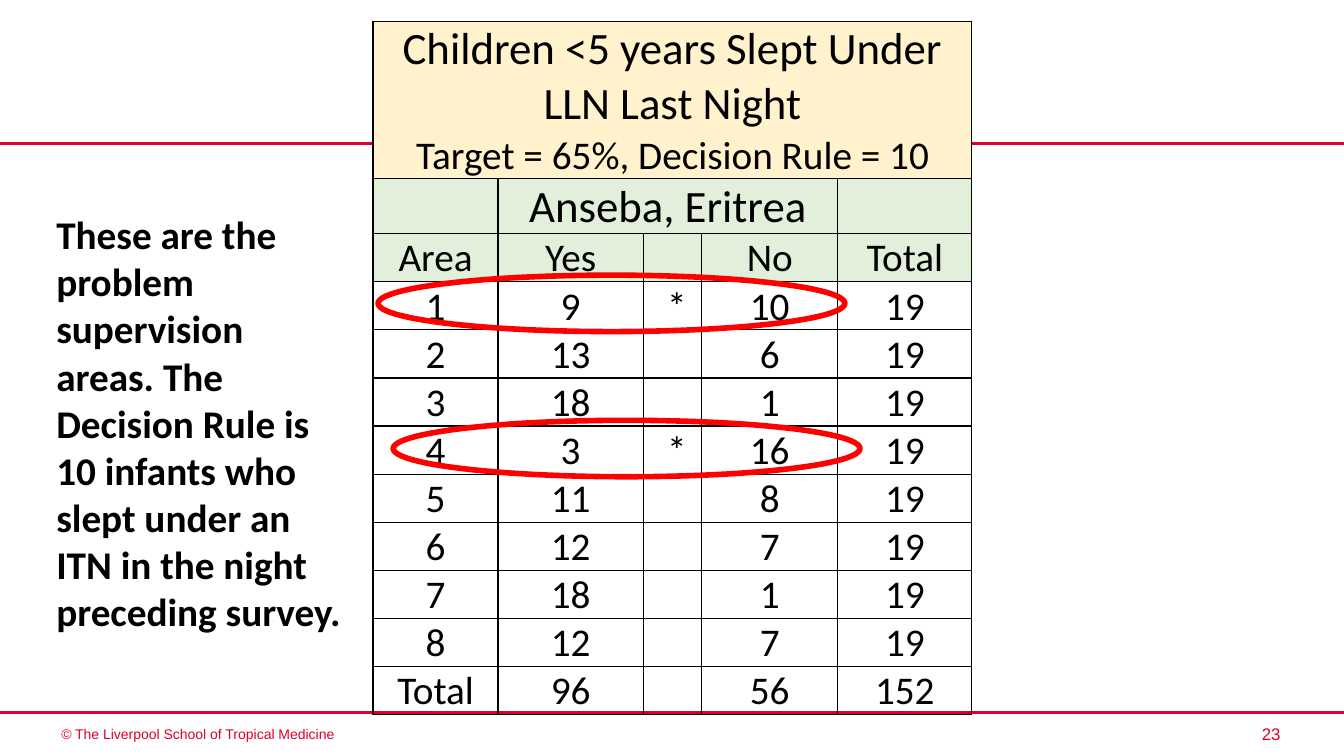
import pptx
import pptx.util
import pptx.dml.color
import pptx.enum.shapes
import pptx.enum.text
import pptx.oxml
import pptx.oxml.ns
import lxml.etree

Inches, Pt = pptx.util.Inches, pptx.util.Pt
ALIGN = pptx.enum.text.PP_ALIGN
RED, BLACK, CREAM, GREEN = "DC002E", "000000", "FFF2CC", "E2EFDA"

TITLE_ROWS = [("Children <5 years Slept Under", 32),
              ("LLN Last Night", 32),
              ("Target = 65%, Decision Rule = 10", 28)]
AREAS = [(9, 10), (13, 6), (18, 1), (3, 16), (11, 8), (12, 7), (18, 1), (12, 7)]
DECISION_RULE = 10
COLUMN_WIDTHS = [1.24, 1.44, 0.58, 1.35, 1.33]
ROW_HEIGHTS = [0.5, 0.5, 0.47, 0.51] + [0.47] * 10


def color(value):
    return pptx.dml.color.RGBColor.from_string(value)


def write(tf, text, size=28, font="Calibri", fill=BLACK, bold=False, align=ALIGN.LEFT):
    p = tf.paragraphs[0]
    p.alignment = align
    r = p.add_run()
    r.text = text
    r.font.size, r.font.name, r.font.bold = Pt(size), font, bold
    r.font.color.rgb = color(fill)


def add_text(s, box, text, **style):
    tf = s.shapes.add_textbox(*map(Inches, box)).text_frame
    tf.word_wrap = True
    tf.margin_right = Inches(0.05)
    write(tf, text, **style)


def add_rule(s, y):
    line = s.shapes.add_connector(pptx.enum.shapes.MSO_CONNECTOR.STRAIGHT,
                                  0, Inches(y), Inches(13.33), Inches(y))
    line.line.color.rgb = color(RED)
    line.line.width = Pt(2.25)
    lxml.etree.SubElement(line._element.spPr, pptx.oxml.ns.qn("a:effectLst"))


def add_ring(s, x, y):
    ring = s.shapes.add_shape(pptx.enum.shapes.MSO_SHAPE.OVAL,
                              Inches(x), Inches(y), Inches(4.63), Inches(0.56))
    ring.shadow.inherit = False
    ring.fill.background()
    ring.line.color.rgb = color("FF0000")
    ring.line.width = Pt(4)


def set_borders(cell, hidden=""):
    for side in "LRTB":
        paint = ("<a:noFill/>" if side in hidden else
                 f'<a:solidFill><a:srgbClr val="{BLACK}"/></a:solidFill>')
        cell._tc.get_or_add_tcPr().append(pptx.oxml.parse_xml(
            f'<a:ln{side} {pptx.oxml.ns.nsdecls("a")} w="{Pt(1)}">{paint}</a:ln{side}>'))


def fill_cell(cell, text="", size=28, fill=None, hidden=""):
    set_borders(cell, hidden)
    if fill:
        cell.fill.solid()
        cell.fill.fore_color.rgb = color(fill)
    else:
        cell.fill.background()
    if text:
        cell.vertical_anchor = pptx.enum.text.MSO_ANCHOR.BOTTOM
        cell.margin_left = cell.margin_right = cell.margin_top = Inches(0.01)
        cell.margin_bottom = 0
        write(cell.text_frame, text, size=size, align=ALIGN.CENTER)


def add_coverage_table(s):
    table = s.shapes.add_table(len(ROW_HEIGHTS), len(COLUMN_WIDTHS), Inches(3.7), Inches(0.21),
                               Inches(sum(COLUMN_WIDTHS)), Inches(sum(ROW_HEIGHTS))).table
    table.first_row = table.horz_banding = False
    for column, width in zip(table.columns, COLUMN_WIDTHS):
        column.width = Inches(width)
    for row, height in zip(table.rows, ROW_HEIGHTS):
        row.height = Inches(height)

    # Title block: three merged rows without lines between them
    for i, ((text, size), hidden) in enumerate(zip(TITLE_ROWS, ("B", "TB", "T"))):
        table.cell(i, 0).merge(table.cell(i, 4))
        for j in range(5):
            fill_cell(table.cell(i, j), "" if j else text, size, CREAM, hidden)

    # Region row
    table.cell(3, 1).merge(table.cell(3, 3))
    for j in range(5):
        fill_cell(table.cell(3, j), "Anseba, Eritrea" if j == 1 else "", 32, GREEN)

    # Column headings, areas and totals
    rows = [("Area", "Yes", "", "No", "Total")]
    for area, (yes, no) in enumerate(AREAS, 1):
        rows.append((area, yes, "\u00a0*" if yes < DECISION_RULE else "", no, yes + no))
    yes, no = map(sum, zip(*AREAS))
    rows.append(("Total", yes, "", no, yes + no))
    for i, values in enumerate(rows, 4):
        for j, value in enumerate(values):
            fill_cell(table.cell(i, j), str(value), fill=GREEN if i == 4 else None)


def main():
    prs = pptx.Presentation()
    prs.slide_width, prs.slide_height = Inches(13.33), Inches(7.5)
    s = prs.slides.add_slide(prs.slide_layouts[6])

    # Footer and rules
    add_text(s, (10.35, 7.13, 2.4, 0.3), "23", size=12, font="Arial", fill=RED, align=ALIGN.RIGHT)
    add_text(s, (0.51, 7.15, 5.26, 0.27), "© The Liverpool School of Tropical Medicine",
             size=10, font="Arial", fill=RED)
    for y in (1.42, 7.07):
        add_rule(s, y)

    # Table, explanation and rings around the problem areas
    add_coverage_table(s)
    add_text(s, (0.46, 2.04, 3.02, 4.81),
             "These are the problem supervision areas. The Decision Rule is 10 infants who "
             "slept under an ITN in the night preceding survey.", bold=True)
    for x, y in ((3.75, 2.73), (3.9, 4.17)):
        add_ring(s, x, y)

    prs.save("out.pptx")


if __name__ == "__main__":
    main()
